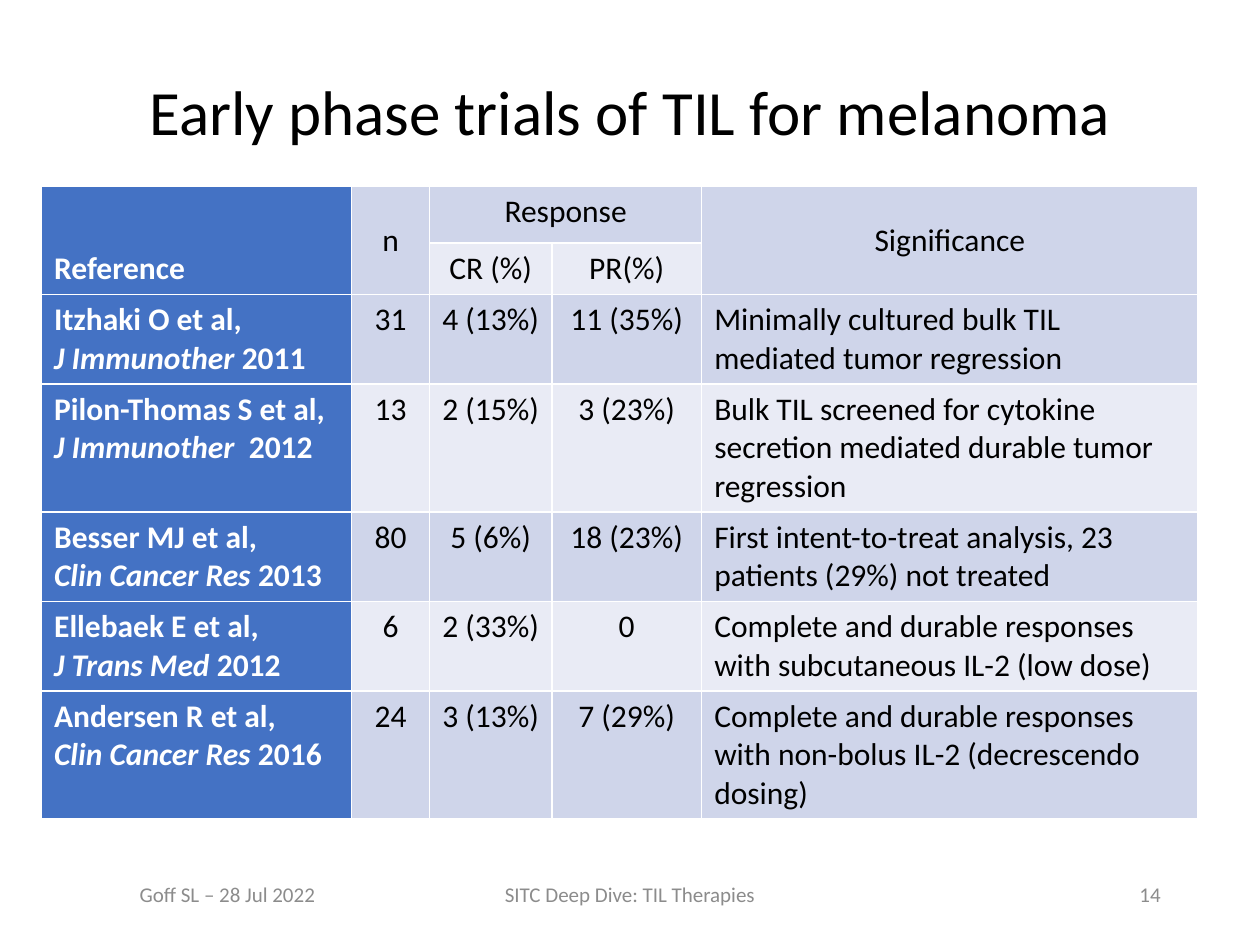
from lxml import etree
from pptx import Presentation
from pptx.dml.color import RGBColor
from pptx.enum.text import MSO_ANCHOR, PP_ALIGN
from pptx.oxml.ns import qn
from pptx.util import Inches, Pt

LEFT, CENTER, RIGHT = PP_ALIGN.LEFT, PP_ALIGN.CENTER, PP_ALIGN.RIGHT
TOP, MIDDLE, BOTTOM = MSO_ANCHOR.TOP, MSO_ANCHOR.MIDDLE, MSO_ANCHOR.BOTTOM

COLORS = {
    "black": "000000",
    "white": "FFFFFF",
    "reference": "4472C4",
    "dark_band": "CFD5EA",
    "light_band": "E9EBF5",
    "footer": "8C8C8C",
}
COLUMN_WIDTHS = [2.46, 0.62, 0.97, 1.19, 3.94]
ROW_HEIGHTS = [0.45, 0.23, 0.66, 0.99, 0.66, 0.66, 0.99]
MERGES = [((0, 0), (1, 0)), ((0, 1), (1, 1)), ((0, 2), (0, 3)), ((0, 4), (1, 4))]
HEADERS = [
    (0, 0, "Reference", BOTTOM),
    (0, 1, "n", MIDDLE),
    (0, 2, "Response", TOP),
    (0, 4, "Significance", MIDDLE),
    (1, 2, "CR (%)", TOP),
    (1, 3, "PR(%)", TOP),
]
TRIALS = [
    ("Itzhaki O et al,", "J Immunother ", "2011", "31", "4 (13%)", "11 (35%)",
     "Minimally cultured bulk TIL mediated tumor regression"),
    ("Pilon-Thomas S et al,", "J Immunother ", " 2012", "13", "2 (15%)", "3 (23%)",
     "Bulk TIL screened for cytokine secretion mediated durable tumor regression"),
    ("Besser MJ et al,", "Clin Cancer Res ", "2013", "80", "5 (6%)", "18 (23%)",
     "First intent-to-treat analysis, 23 patients (29%) not treated"),
    ("Ellebaek E et al,", "J Trans Med ", "2012", "6", "2 (33%)", "0",
     "Complete and durable responses with subcutaneous IL-2 (low dose)"),
    ("Andersen R et al,", "Clin Cancer Res", " 2016", "24", "3 (13%)", "7 (29%)",
     "Complete and durable responses with non-bolus IL-2 (decrescendo dosing)"),
]
FOOTERS = [
    (1.01, 1.93, "Goff SL – 28 Jul 2022", LEFT),
    (3.31, 3.38, "SITC Deep Dive: TIL Therapies", CENTER),
    (7.06, 2.25, "14", RIGHT),
]


class SlideBuilder:
    font_name = "Calibri"

    def __init__(self, page):
        self.page = page

    def style(self, frame, size, color, align, bold=False):
        for para in frame.paragraphs:
            para.alignment = align
            for span in para.runs:
                span.font.name = self.font_name
                span.font.size = Pt(size)
                span.font.bold = bold
                span.font.color.rgb = RGBColor.from_string(COLORS[color])

    def title(self, text):
        box = self.page.shapes.title
        box.left, box.top = Inches(0.69), Inches(0.4)
        box.width, box.height = Inches(8.62), Inches(1.02)
        frame = box.text_frame
        frame.text = text
        frame.vertical_anchor = MIDDLE
        frame.paragraphs[0].line_spacing = 0.9
        self.style(frame, 36, "black", CENTER)

    def footer(self, left, width, text, align):
        box = self.page.shapes.add_textbox(
            Inches(left), Inches(6.9), Inches(width), Inches(0.4))
        frame = box.text_frame
        frame.word_wrap = True
        frame.vertical_anchor = MIDDLE
        frame.text = text
        self.style(frame, 12, "footer", align)

    def border(self, cell):
        properties = cell._tc.get_or_add_tcPr()
        for side in ("a:lnL", "a:lnR", "a:lnT", "a:lnB"):
            line = etree.SubElement(properties, qn(side), w=str(Pt(1)))
            fill = etree.SubElement(line, qn("a:solidFill"))
            etree.SubElement(fill, qn("a:srgbClr"), val=COLORS["white"])

    def table(self):
        shape = self.page.shapes.add_table(
            len(ROW_HEIGHTS), len(COLUMN_WIDTHS),
            Inches(0.33), Inches(1.48), Inches(9.19), Inches(4.95))
        table = shape.table
        table.first_row = False
        table.horz_banding = False
        for column, width in zip(table.columns, COLUMN_WIDTHS):
            column.width = Inches(width)
        for row, height in zip(table.rows, ROW_HEIGHTS):
            row.height = Inches(height)
        shape.height = Inches(4.95)
        for first, last in MERGES:
            table.cell(*first).merge(table.cell(*last))
        for row_index, row in enumerate(table.rows):
            band = "light_band" if row_index % 2 else "dark_band"
            for column_index, cell in enumerate(row.cells):
                self.border(cell)
                cell.fill.solid()
                color = band if column_index else "reference"
                cell.fill.fore_color.rgb = RGBColor.from_string(COLORS[color])
        return table

    def cell(self, table, row, column, text, align, anchor=TOP):
        cell = table.cell(row, column)
        cell.text_frame.text = text
        cell.vertical_anchor = anchor
        is_reference = column == 0
        color = "white" if is_reference else "black"
        self.style(cell.text_frame, 18, color, align, bold=is_reference)

    def reference(self, table, row, authors, journal, year):
        frame = table.cell(row, 0).text_frame
        frame.text = authors
        citation = frame.add_paragraph()
        for text, italic in ((journal, True), (year, False)):
            span = citation.add_run()
            span.text = text
            span.font.italic = italic
        self.style(frame, 18, "white", LEFT, bold=True)


def main():
    deck = Presentation()
    deck.slide_width, deck.slide_height = Inches(10), Inches(7.5)
    builder = SlideBuilder(deck.slides.add_slide(deck.slide_layouts[5]))
    builder.title("Early phase trials of TIL for melanoma")
    table = builder.table()
    for row, column, text, anchor in HEADERS:
        builder.cell(table, row, column, text, CENTER if column else LEFT, anchor)
    for row, (authors, journal, year, *results, significance) in enumerate(TRIALS, 2):
        builder.reference(table, row, authors, journal, year)
        for column, text in enumerate(results, 1):
            builder.cell(table, row, column, text, CENTER)
        builder.cell(table, row, 4, significance, LEFT)
    for footer in FOOTERS:
        builder.footer(*footer)
    deck.save("out.pptx")


if __name__ == "__main__":
    main()
